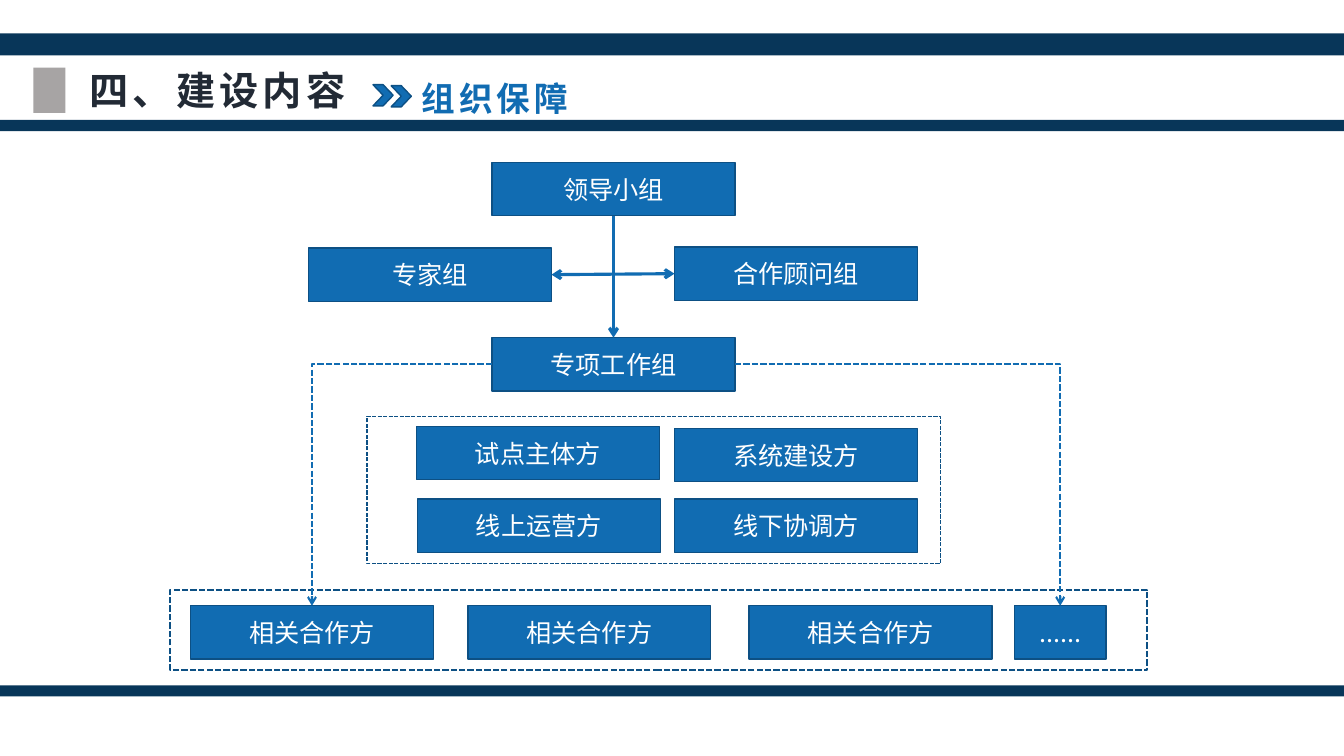
from pptx import Presentation
from pptx.dml.color import RGBColor
from pptx.enum.dml import MSO_LINE
from pptx.enum.shapes import MSO_CONNECTOR as CXN, MSO_SHAPE as SHAPE
from pptx.enum.text import MSO_ANCHOR, MSO_AUTO_SIZE, PP_ALIGN
from pptx.oxml.ns import qn
from pptx.util import Pt
from lxml import etree

PX = 9144
BOX_W, BOX_H = 241, 53
TOP, LEFT, BOTTOM, RIGHT = range(4)

THEME = {
    "font": "Noto Sans CJK SC",
    "ink": "222A35", "navy": "083659", "gray": "767171",
    "blue": "116CB2", "edge": "0D5084", "white": "FFFFFF",
    "title": 28, "subtitle": 24, "label": 18,
}

BARS = [(33, 22), (119, 11), (680, 11)]
HEADINGS = [
    ("四、建设内容", (79, 61, 421, 57), "title", "ink"),
    ("组织保障", (408, 72, 521, 50), "subtitle", "blue"),
]
CHEVRONS = [(388, 85), (370, 84)]
FRAMES = [((364, 413, 569, 146), 1), ((169, 585, 969, 80), 1.5)]
BOXES = {
    "leaders": ("领导小组", 488, 161, BOX_W),
    "experts": ("专家组", 306, 246, BOX_W),
    "advisers": ("合作顾问组", 669, 245, BOX_W),
    "taskforce": ("专项工作组", 488, 335, BOX_W),
    "pilot": ("试点主体方", 413, 423, BOX_W),
    "builder": ("系统建设方", 669, 425, BOX_W),
    "online": ("线上运营方", 414, 495, BOX_W),
    "offline": ("线下协调方", 669, 495, BOX_W),
    "partner1": ("相关合作方", 189, 601, BOX_W),
    "partner2": ("相关合作方", 464, 601, BOX_W),
    "partner3": ("相关合作方", 743, 601, BOX_W),
    "others": ("......", 1006, 601, 91),
}
LINKS = [
    ("leaders", BOTTOM, "taskforce", TOP, "line", ["tailEnd"]),
    ("experts", RIGHT, "advisers", LEFT, "line", ["headEnd", "tailEnd"]),
    ("taskforce", LEFT, "partner1", TOP, "elbow", ["tailEnd"]),
    ("taskforce", RIGHT, "others", TOP, "elbow", ["tailEnd"]),
]


def color(name):
    return RGBColor.from_string(THEME[name])


def emu(values):
    return [v * PX for v in values]


def add_text(tf, text, size, ink, bold=False, spacing=0, align=PP_ALIGN.LEFT,
             anchor=MSO_ANCHOR.TOP):
    tf.word_wrap = True
    tf.vertical_anchor = anchor
    p = tf.paragraphs[0]
    p.alignment = align
    r = p.add_run()
    r.text = text
    r.font.size = Pt(THEME[size])
    r.font.bold = bold
    r.font.name = THEME["font"]
    r.font.color.rgb = color(ink)
    rpr = r._r.get_or_add_rPr()
    etree.SubElement(rpr, qn("a:ea")).set("typeface", THEME["font"])
    if spacing:
        rpr.set("spc", str(spacing * 100))


def add_block(s, kind, box, fill=None, edge=None, width=1, dash=None):
    sp = s.shapes.add_shape(kind, *emu(box))
    sp.shadow.inherit = False
    if fill:
        sp.fill.solid()
        sp.fill.fore_color.rgb = color(fill)
    else:
        sp.fill.background()
    if edge:
        sp.line.color.rgb = color(edge)
        sp.line.width = Pt(width)
        if dash:
            sp.line.dash_style = dash
    else:
        sp.line.fill.background()
    return sp


def add_link(s, start, start_side, end, end_side, kind, heads):
    elbow = kind == "elbow"
    cx = s.shapes.add_connector(CXN.ELBOW if elbow else CXN.STRAIGHT, 0, 0, 0, 0)
    cx.begin_connect(start, start_side)
    cx.end_connect(end, end_side)
    cx.line.color.rgb = color("blue")
    cx.line.width = Pt(1.5 if elbow else 2.25)
    sppr = cx._element.spPr
    if elbow:
        sppr.find(qn("a:prstGeom")).set("prst", "bentConnector2")
        cx.line.dash_style = MSO_LINE.SQUARE_DOT
    for head in heads:
        etree.SubElement(sppr.find(qn("a:ln")), qn("a:" + head)).set("type", "arrow")
    etree.SubElement(sppr, qn("a:effectLst"))


def main():
    prs = Presentation()
    prs.slide_width, prs.slide_height = emu((1333, 750))
    s = prs.slides.add_slide(prs.slide_layouts[6])

    for y, h in BARS:
        add_block(s, SHAPE.RECTANGLE, (-6, y, 1345, h), "navy")
    marker = add_block(s, SHAPE.RECTANGLE, (33, 67, 32, 45), "gray")
    tint = marker.fill._xPr.find(qn("a:solidFill"))[0]
    etree.SubElement(tint, qn("a:alpha")).set("val", "64000")

    for text, box, size, ink in HEADINGS:
        tf = s.shapes.add_textbox(*emu(box)).text_frame
        tf.auto_size = MSO_AUTO_SIZE.SHAPE_TO_FIT_TEXT
        add_text(tf, text, size, ink, bold=True, spacing=3)
    for x, y in CHEVRONS:
        add_block(s, SHAPE.CHEVRON, (x, y, 20, 21), "blue", "edge")

    for box, width in FRAMES:
        add_block(s, SHAPE.RECTANGLE, box, None, "edge", width, MSO_LINE.SQUARE_DOT)
    nodes = {}
    for key, (text, x, y, w) in BOXES.items():
        sp = add_block(s, SHAPE.RECTANGLE, (x, y, w, BOX_H), "blue", "edge")
        add_text(sp.text_frame, text, "label", "white", align=PP_ALIGN.CENTER,
                 anchor=MSO_ANCHOR.MIDDLE)
        nodes[key] = sp
    for start, start_side, end, end_side, kind, heads in LINKS:
        add_link(s, nodes[start], start_side, nodes[end], end_side, kind, heads)

    prs.save("out.pptx")


if __name__ == "__main__":
    main()
